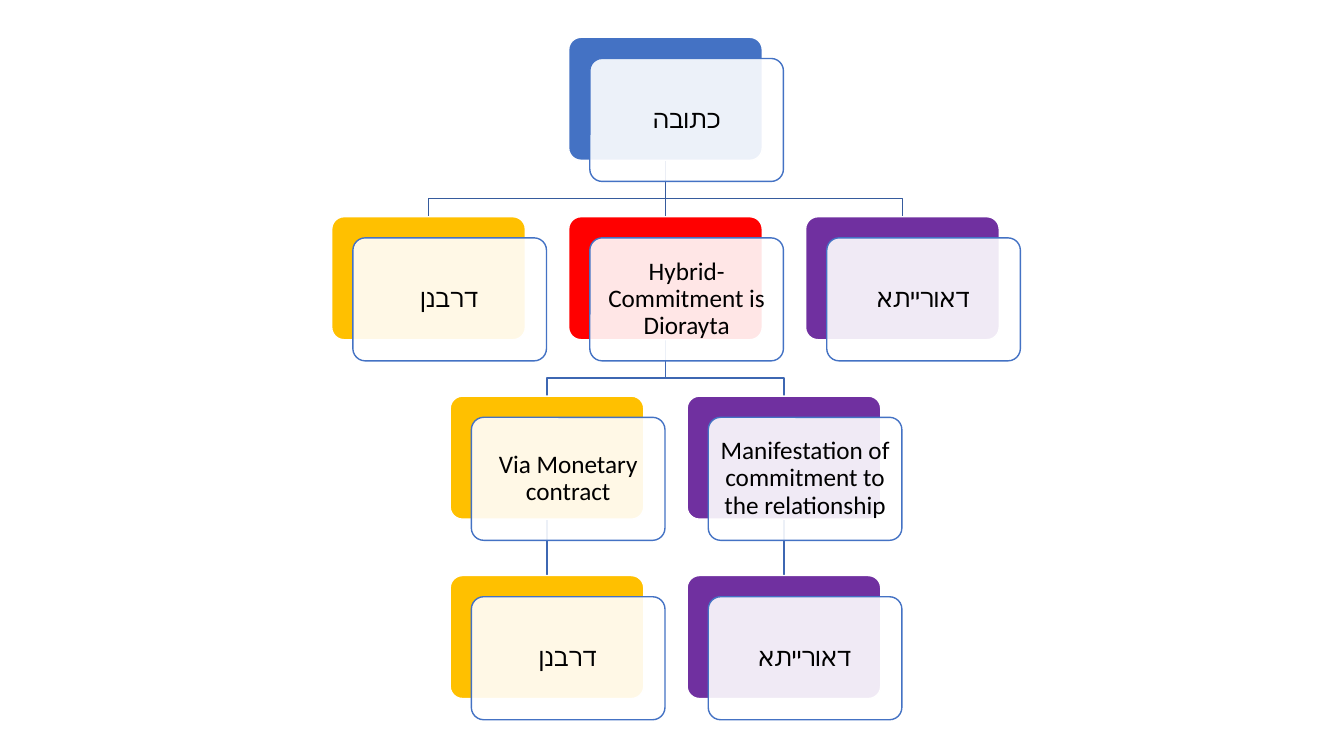
from lxml.etree import SubElement
from pptx import Presentation
from pptx.dml.color import RGBColor
from pptx.enum.shapes import MSO_CONNECTOR, MSO_SHAPE
from pptx.enum.text import MSO_ANCHOR, PP_ALIGN
from pptx.oxml.ns import qn
from pptx.util import Inches, Pt

BLUE = RGBColor(0x44, 0x72, 0xC4)
DARK_BLUE = RGBColor(0x36, 0x5B, 0x9D)
MID_BLUE = RGBColor(0x3E, 0x67, 0xB2)
PURPLE = RGBColor(0x70, 0x30, 0xA0)
RED = RGBColor(0xFF, 0x00, 0x00)
GOLD = RGBColor(0xFF, 0xC0, 0x00)
WHITE = RGBColor(0xFF, 0xFF, 0xFF)
BLACK = RGBColor(0x00, 0x00, 0x00)

CARD_WIDTH, CARD_HEIGHT = 1.92, 1.22
COLUMN_STEP, ROW_STEP = 2.35, 1.78
CENTER_X, FIRST_TOP = 6.6, 0.37
PANEL_OFFSET = 0.21
BRANCH_DROP = 0.38

CARDS = [
    (0, 0, BLUE, "כתובה"),
    (1, 1, PURPLE, "דאורייתא"),
    (0, 1, RED, "Hybrid- Commitment is Diorayta"),
    (0.5, 2, PURPLE, "Manifestation of commitment to the relationship"),
    (0.5, 3, PURPLE, "דאורייתא"),
    (-0.5, 2, GOLD, "Via Monetary contract"),
    (-0.5, 3, GOLD, "דרבנן"),
    (-1, 1, GOLD, "דרבנן"),
]

BRANCHES = [
    (0, 0, -1, DARK_BLUE),
    (-0.5, 2, -0.5, MID_BLUE),
    (0, 1, -0.5, MID_BLUE),
    (0.5, 2, 0.5, MID_BLUE),
    (0, 1, 0.5, MID_BLUE),
    (0, 0, 0, DARK_BLUE),
    (0, 0, 1, DARK_BLUE),
]


def write_text(frame, text, font="Calibri", size=18, color=BLACK, inset=0.07):
    frame.word_wrap = True
    frame.vertical_anchor = MSO_ANCHOR.MIDDLE
    frame.margin_left = frame.margin_right = Inches(inset)
    frame.margin_top = frame.margin_bottom = Inches(inset)
    para = frame.paragraphs[0]
    para.alignment = PP_ALIGN.CENTER
    para.line_spacing = 0.9
    para._p.get_or_add_pPr().set("rtl", "1")
    span = para.add_run()
    span.text = text
    span.font.name = font
    span.font.size = Pt(size)
    span.font.color.rgb = color


class TreeChart:
    def __init__(self, page, line_width=1):
        self.page = page
        self.line_width = Pt(line_width)

    def center_x(self, column):
        return CENTER_X + column * COLUMN_STEP

    def top(self, row):
        return FIRST_TOP + row * ROW_STEP

    def outline(self, shape, color):
        shape.line.color.rgb = color
        shape.line.width = self.line_width

    def box(self, left, top, fill, line):
        box = self.page.shapes.add_shape(
            MSO_SHAPE.ROUNDED_RECTANGLE,
            Inches(left), Inches(top), Inches(CARD_WIDTH), Inches(CARD_HEIGHT))
        box.adjustments[0] = 0.1
        box.shadow.inherit = False
        box.fill.solid()
        box.fill.fore_color.rgb = fill
        self.outline(box, line)
        return box

    def card(self, column, row, color, text):
        left = self.center_x(column) - CARD_WIDTH / 2
        top = self.top(row)
        self.box(left, top, color, WHITE)
        panel = self.box(left + PANEL_OFFSET, top + PANEL_OFFSET, WHITE, BLUE)
        fill_color = panel._element.spPr.find(qn("a:solidFill")).find(qn("a:srgbClr"))
        SubElement(fill_color, qn("a:alpha")).set("val", "90000")
        write_text(panel.text_frame, text)

    def branch(self, column, row, child_column, color):
        start_x = Inches(self.center_x(column))
        end_x = Inches(self.center_x(child_column))
        start_y = Inches(self.top(row) + CARD_HEIGHT)
        end_y = Inches(self.top(row + 1))
        if column == child_column:
            line = self.page.shapes.add_connector(
                MSO_CONNECTOR.STRAIGHT, start_x, start_y, end_x, end_y)
            SubElement(line._element.spPr, qn("a:effectLst"))
        else:
            bend_y = start_y + Inches(BRANCH_DROP)
            builder = self.page.shapes.build_freeform(start_x, start_y)
            builder.add_line_segments(
                [(start_x, bend_y), (end_x, bend_y), (end_x, end_y)], close=False)
            line = builder.convert_to_shape()
            line.fill.background()
            line.shadow.inherit = False
        self.outline(line, color)


def main():
    deck = Presentation()
    deck.slide_width = Inches(13.33)
    deck.slide_height = Inches(7.5)
    chart = TreeChart(deck.slides.add_slide(deck.slide_layouts[6]))
    for branch in BRANCHES:
        chart.branch(*branch)
    for card in CARDS:
        chart.card(*card)
    deck.save("out.pptx")


if __name__ == "__main__":
    main()
